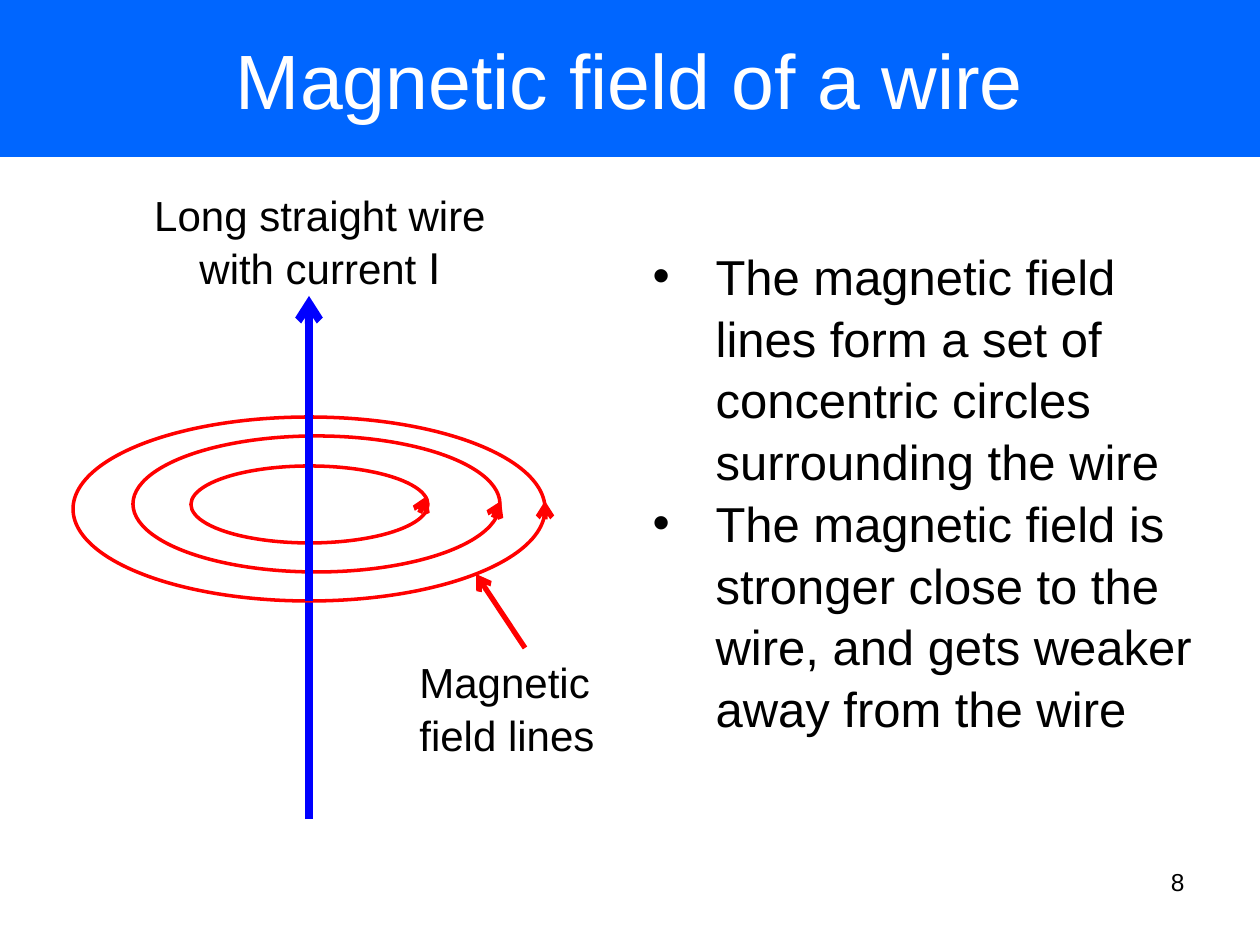
import pptx
import pptx.util
import pptx.dml.color
import pptx.enum.shapes
import pptx.enum.text
import pptx.oxml
import pptx.oxml.ns
from dataclasses import dataclass

ALIGN = pptx.enum.text.PP_ALIGN
ANCHOR = pptx.enum.text.MSO_ANCHOR


@dataclass(frozen=True)
class Theme:
    font: str = "Arial"
    symbol: str = "DejaVu Sans"
    band: str = "0066FF"
    light: str = "FFFFFF"
    ink: str = "000000"
    wire: str = "0000FF"
    field: str = "FF0000"
    title: int = 44
    body: int = 28
    label: int = 24
    small: int = 14
    thick: float = 4.5
    arrow: int = 3
    ring: int = 2
    leading: float = 1.05


THEME = Theme()


def px(n):
    return pptx.util.Emu(round(n * 914400 / 126))


def rgb(code):
    return pptx.dml.color.RGBColor.from_string(code)


def place(shape, box):
    shape.left, shape.top, shape.width, shape.height = map(px, box)


def style(run, size, color, font):
    run.font.size = pptx.util.Pt(size)
    run.font.name = font
    run.font.color.rgb = rgb(color)


def write(shape, *lines, size=THEME.label, color=THEME.ink, align=ALIGN.LEFT,
          anchor=ANCHOR.TOP, wrap=True, leading=1.0, bullet=False, symbol=""):
    """Fill a shape with one paragraph per line; symbol ends the last one."""
    frame = shape.text_frame
    frame.auto_size = pptx.enum.text.MSO_AUTO_SIZE.NONE
    frame.word_wrap = wrap
    frame.vertical_anchor = anchor
    for i, line in enumerate(lines):
        para = frame.add_paragraph() if i else frame.paragraphs[0]
        para.text = line
        para.alignment = align
        para.line_spacing = leading
        para.space_before = pptx.util.Pt(0)
        for run in para.runs:
            style(run, size, color, THEME.font)
        if bullet:
            mark(para)
    if symbol:
        run = para.add_run()
        run.text = symbol
        style(run, size, color, THEME.symbol)


def mark(para):
    props = para._p.get_or_add_pPr()
    props.set("marL", str(px(63)))
    props.set("indent", str(-px(63)))
    dot = pptx.oxml.ns.qn("a:buChar")
    props.append(props.makeelement(dot, {"char": "•"}))


def label(slide, box, *lines, **form):
    text = slide.shapes.add_textbox(*map(px, box))
    write(text, *lines, **form)


def ring(slide, box):
    oval = slide.shapes.add_shape(
        pptx.enum.shapes.MSO_SHAPE.OVAL, *map(px, box))
    oval.shadow.inherit = False
    oval.fill.background()
    oval.line.color.rgb = rgb(THEME.field)
    oval.line.width = pptx.util.Pt(THEME.ring)


def line(slide, start, end, color, width, arrow=False):
    link = slide.shapes.add_connector(
        pptx.enum.shapes.MSO_CONNECTOR.STRAIGHT, *map(px, start + end))
    link.line.color.rgb = rgb(color)
    link.line.width = pptx.util.Pt(width)
    if arrow:
        stroke = link.line._get_or_add_ln()
        tip = pptx.oxml.ns.qn("a:tailEnd")
        stroke.append(stroke.makeelement(tip, {"type": "arrow"}))
    props = link._element.spPr
    props.append(props.makeelement(pptx.oxml.ns.qn("a:effectLst"), {}))


def main():
    deck = pptx.Presentation()
    deck.slide_width, deck.slide_height = px(1260), px(945)
    slide = deck.slides.add_slide(deck.slide_layouts[1])
    title, body = slide.placeholders

    # Title band
    place(title, (0, 0, 1260, 157))
    title.fill.solid()
    title.fill.fore_color.rgb = rgb(THEME.band)
    write(title, "Magnetic field of a wire", size=THEME.title,
          color=THEME.light, align=ALIGN.CENTER, anchor=ANCHOR.MIDDLE)

    # Explanation
    place(body, (640, 237, 585, 606))
    write(body,
          "The magnetic field lines form a set of concentric circles "
          "surrounding the wire",
          "The magnetic field is stronger close to the wire, and gets weaker "
          "away from the wire",
          size=THEME.body, leading=THEME.leading, bullet=True)

    # Lower wire, behind the field lines
    wire = THEME.wire, THEME.thick
    line(slide, (309, 819), (309, 601), *wire)

    # Field lines with their directions
    for box in ((191, 466, 237, 77), (133, 436, 367, 136),
                (73, 417, 472, 184)):
        ring(slide, box)
    for start, end in (((421, 510), (427, 496)), ((495, 514), (501, 501)),
                       ((545, 514), (545, 501)), ((525, 648), (476, 574))):
        line(slide, start, end, THEME.field, THEME.arrow, arrow=True)

    # Upper wire, in front of the field lines
    line(slide, (309, 514), (309, 296), *wire, arrow=True)
    line(slide, (309, 514), (309, 601), *wire)

    # Labels and page number
    label(slide, (140, 181, 360, 115), "Long straight wire", "with current ",
          align=ALIGN.CENTER, wrap=False, leading=THEME.leading, symbol="I")
    label(slide, (407, 648, 203, 115), "Magnetic\vfield lines",
          wrap=False, leading=THEME.leading)
    label(slide, (1129, 861, 68, 66), "8", size=THEME.small,
          align=ALIGN.RIGHT)

    deck.save("out.pptx")


if __name__ == "__main__":
    main()
